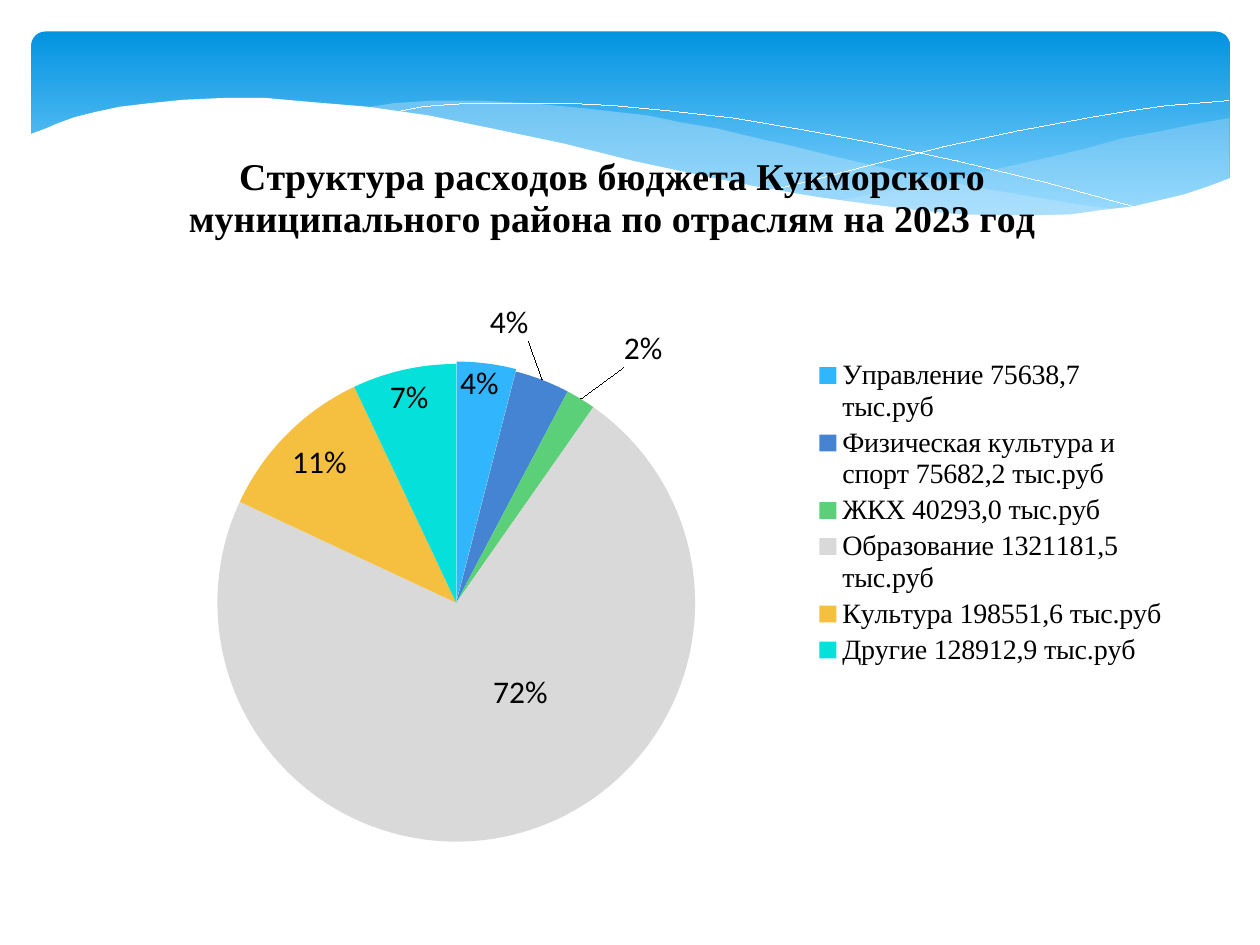
from lxml.etree import SubElement
from pptx import Presentation
from pptx.chart.data import CategoryChartData
from pptx.dml.color import RGBColor
from pptx.enum.chart import XL_CHART_TYPE as ChartType
from pptx.enum.chart import XL_LABEL_POSITION as LabelPosition
from pptx.enum.chart import XL_LEGEND_POSITION as LegendPosition
from pptx.enum.shapes import MSO_SHAPE as Preset
from pptx.oxml.ns import qn
from pptx.util import Pt

BLACK = RGBColor(0x00, 0x00, 0x00)
WHITE = RGBColor(0xFF, 0xFF, 0xFF)
BANNER_TOP = RGBColor(0x02, 0x93, 0xE0)
BANNER_BOTTOM = RGBColor(0x83, 0xD3, 0xFE)
WAVE_BLUE = RGBColor(0xC6, 0xE7, 0xFC)
SKY = RGBColor(0x31, 0xB6, 0xFD)
BLUE = RGBColor(0x45, 0x84, 0xD3)
GREEN = RGBColor(0x5B, 0xD0, 0x78)
GRAY = RGBColor(0xD9, 0xD9, 0xD9)
YELLOW = RGBColor(0xF5, 0xC0, 0x40)
TURQUOISE = RGBColor(0x05, 0xE0, 0xDB)
CHART_WIDTH, CHART_HEIGHT = 629.5, 425.5

presentation = Presentation()
presentation.slide_width, presentation.slide_height = Pt(720), Pt(540)
slide = presentation.slides.add_slide(presentation.slide_layouts[6])


def add_wave(points, color, alpha=100, filled=True):
    """Draw a filled wave, or a hairline curve, through points given in points."""
    # The builder keeps whole units only, so it works in tenths of a point
    tenths = [(x * 10, y * 10) for x, y in points]
    builder = slide.shapes.build_freeform(*tenths[0], scale=Pt(0.1))
    builder.add_line_segments(tenths[1:], close=filled)
    shape = builder.convert_to_shape()
    shape.shadow.inherit = False
    if not filled:
        shape.fill.background()
        shape.line.color.rgb = color
        shape.line.width = Pt(0.01)
        return
    shape.fill.solid()
    shape.fill.fore_color.rgb = color
    shape.line.fill.background()
    if alpha < 100:
        color_element = shape.fill._xPr.find(qn("a:solidFill"))[0]
        SubElement(color_element, qn("a:alpha"), val=str(alpha * 1000))


def set_layout(parent, index, lengths, modes):
    """Place a chart part by lengths in points, stored as fractions of the chart."""
    for old_layout in parent.findall(qn("c:layout")):
        parent.remove(old_layout)
    layout = SubElement(parent, qn("c:layout"))
    parent.insert(index, layout)
    manual = SubElement(layout, qn("c:manualLayout"))
    chart_sizes = (CHART_WIDTH, CHART_HEIGHT) * 2
    fractions = {tag: length / size for tag, length, size in zip("xywh", lengths, chart_sizes)}
    for tag, value in {**modes, **fractions}.items():
        SubElement(manual, qn("c:" + tag), val=str(value))


# Banner
banner = slide.shapes.add_shape(Preset.ROUNDED_RECTANGLE, Pt(18), Pt(18), Pt(684.7), Pt(112.5))
banner.adjustments[0] = 0.07
banner.shadow.inherit = False
banner.line.fill.background()
banner.fill.gradient()
banner.fill.gradient_angle = 270
for stop, position, color in zip(banner.fill.gradient_stops, (0, 0.9), (BANNER_TOP, BANNER_BOTTOM)):
    stop.position = position
    stop.color.rgb = color

# Waves over the banner
right_wave = [
    (702.5, 67.5), (682.5, 71), (663, 75), (641.5, 79), (620, 85), (599, 90), (561, 98.5),
    (525, 106), (476, 115), (497.5, 118), (517.5, 120), (536.5, 122), (554, 123), (570, 124),
    (593, 124), (615, 123), (634, 121.5), (652, 118.5), (668, 115), (683.5, 109.5), (702.5, 101.5)]
middle_wave = [
    (643, 120), (623.5, 118), (602.5, 114.5), (581, 111), (558, 107), (533.5, 102), (508, 96.5),
    (481, 90.5), (453, 83.5), (430.5, 78.5), (410, 73.5), (389.5, 70), (370, 66), (352, 64),
    (335, 62), (302.5, 59), (273.5, 57.5), (248, 57.5), (225, 59), (206, 62), (232.5, 65),
    (260.5, 70), (291, 76), (323, 83.5), (353.5, 90.5), (381.5, 97), (407.5, 103), (432.5, 108),
    (456.5, 112.5), (479, 116), (500.5, 119), (520, 121), (538.5, 122.5), (556.5, 124),
    (573, 124.5), (589, 124.5), (603.5, 124), (617, 123), (630.5, 121.5)]
falling_line = [
    (222.5, 65), (229, 63.5), (241, 61), (254, 60), (269, 59), (288.5, 59), (324, 59),
    (352, 60.5), (383.5, 63.5), (419, 67.5), (458, 74), (500.5, 82), (547, 92), (598.5, 104.5),
    (653, 119.5)]
rising_line = [
    (441.5, 108.5), (470, 101.5), (500.5, 93.5), (538.5, 84), (580.5, 75), (623.5, 67),
    (644.5, 63.5), (665.5, 60.5), (684.5, 59), (702, 57.5)]
white_wave = [
    (703.5, 101.5), (690.5, 106.5), (677, 111), (662.5, 114.5), (647.5, 118), (630, 120),
    (612, 122.5), (592.5, 123), (571, 123), (548, 122.5), (523, 120), (495.5, 116.5),
    (466.5, 112.5), (434, 107), (399.5, 100), (362, 92), (322, 82), (281.5, 73.5), (245, 66),
    (210, 61), (180, 58.5), (152, 56), (127.5, 56), (105, 57), (85.5, 59), (68.5, 61),
    (54.5, 64), (42.5, 67), (33, 70.5), (26, 73.5), (16.5, 77), (16.5, 161.5), (703.5, 161.5)]
add_wave(right_wave, WAVE_BLUE, alpha=29)
add_wave(middle_wave, WAVE_BLUE, alpha=40)
add_wave(falling_line, WHITE, filled=False)
add_wave(rising_line, WHITE, filled=False)
add_wave(white_wave, WHITE)

# Pie chart: category, share, colour, label position, label offset
sectors = [
    ("Управление 75638,7 тыс.руб", 0.04, SKY, LabelPosition.INSIDE_END, (7.5, -3.5)),
    ("Физическая культура и спорт 75682,2 тыс.руб", 0.037, BLUE, LabelPosition.OUTSIDE_END, (-31.5, -18)),
    ("ЖКХ 40293,0 тыс.руб", 0.02, GREEN, LabelPosition.OUTSIDE_END, (22.5, -14.5)),
    ("Образование 1321181,5 тыс.руб", 0.72, GRAY, LabelPosition.CENTER, (19, -15)),
    ("Культура 198551,6 тыс.руб", 0.11, YELLOW, LabelPosition.INSIDE_END, (0, 2)),
    ("Другие 128912,9 тыс.руб", 0.07, TURQUOISE, LabelPosition.INSIDE_END, (-9, 1)),
]
chart_data = CategoryChartData(number_format="0%")
chart_data.categories = [sector[0] for sector in sectors]
chart_data.add_series("Series 1", [sector[1] for sector in sectors])
chart = slide.shapes.add_chart(
    ChartType.PIE, Pt(42.5), Pt(83), Pt(CHART_WIDTH), Pt(CHART_HEIGHT), chart_data).chart
plot = chart.plots[0]
plot.vary_by_categories = True
series = plot.series[0]

# Title and legend
chart.has_title = True
chart.chart_title.text_frame.text = "Структура расходов бюджета Кукморского муниципального района по отраслям на 2023 год"
chart.has_legend = True
chart.legend.position = LegendPosition.RIGHT
chart.legend.include_in_layout = False

# Fonts
labels = series.data_labels
title_run = chart.chart_title.text_frame.paragraphs[0].runs[0]
font_formats = [
    (chart.font, {"name": "Calibri", "size": Pt(18)}),
    (labels.font, {"name": "Calibri", "size": Pt(18)}),
    (title_run.font, {"name": "Times New Roman", "size": Pt(21.6), "bold": True}),
    (chart.legend.font, {"name": "Times New Roman", "size": Pt(16)}),
]
for font, values in font_formats:
    font.color.rgb = BLACK
    for name, value in values.items():
        setattr(font, name, value)

# Sector colours and labels
label_format = {"show_value": True, "show_percentage": False,
                "number_format": "0%", "number_format_is_linked": False}
for name, value in label_format.items():
    setattr(labels, name, value)
for index, (category, share, color, position, offset) in enumerate(sectors):
    point = series.points[index]
    point.format.fill.solid()
    point.format.fill.fore_color.rgb = color
    point.data_label.position = position
    label_element = labels._element.findall(qn("c:dLbl"))[index]
    set_layout(label_element, 1, offset, {})

# The first sector stands out slightly
first_sector = series._element.find(qn("c:dPt"))
explosion = SubElement(first_sector, qn("c:explosion"), val="1")
first_sector.find(qn("c:spPr")).addprevious(explosion)

# Places of the chart parts
chart_element = chart._chartSpace.chart
edges = {"xMode": "edge", "yMode": "edge"}
set_layout(chart_element.find(qn("c:title")), 1, (61.5, -3), edges)
set_layout(chart_element.plotArea, 0, (45.5, 125, 345.5, 273), {"layoutTarget": "inner", **edges})
set_layout(chart_element.find(qn("c:legend")), 1, (423.5, 120, 200, 180), edges)

presentation.save("out.pptx")
